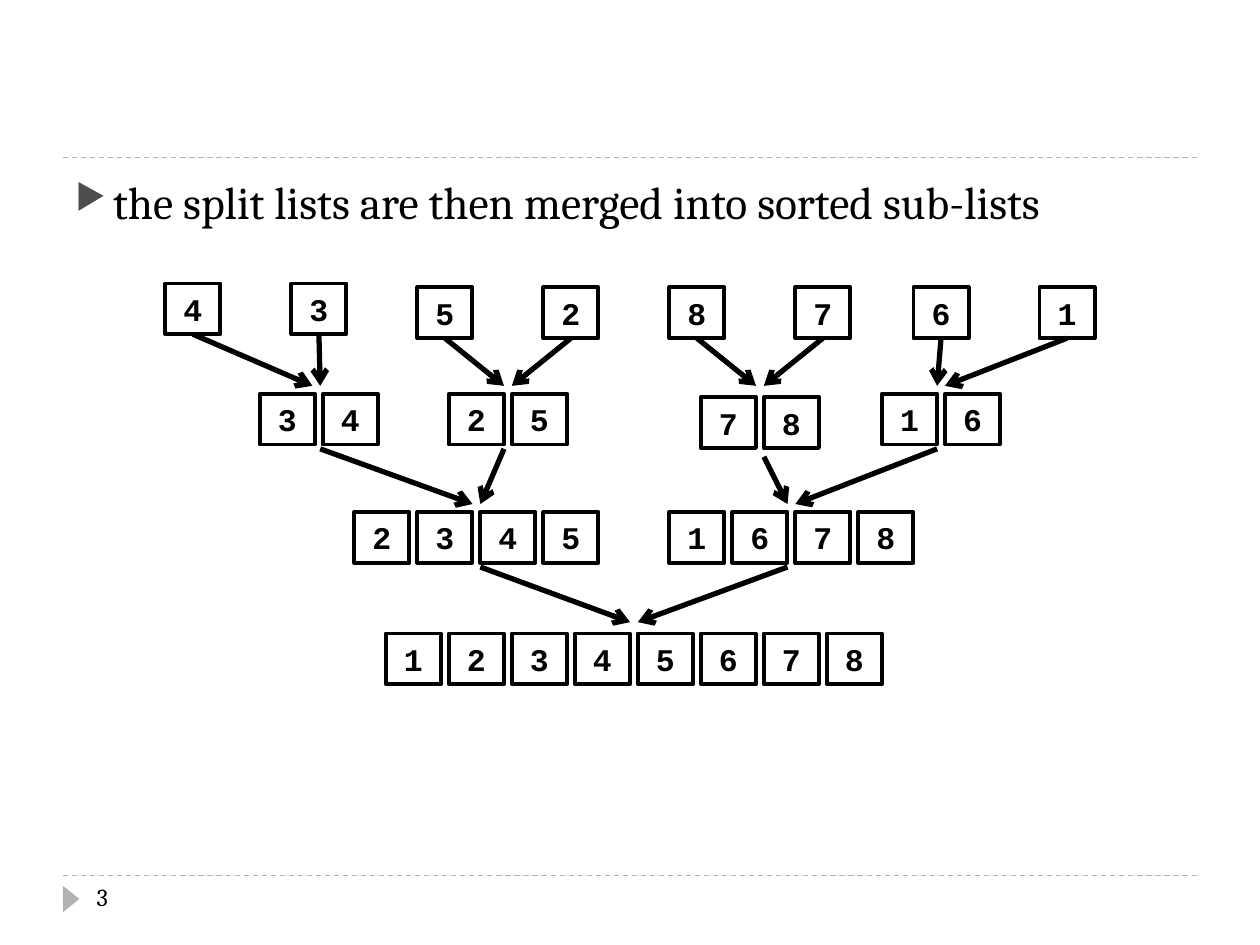
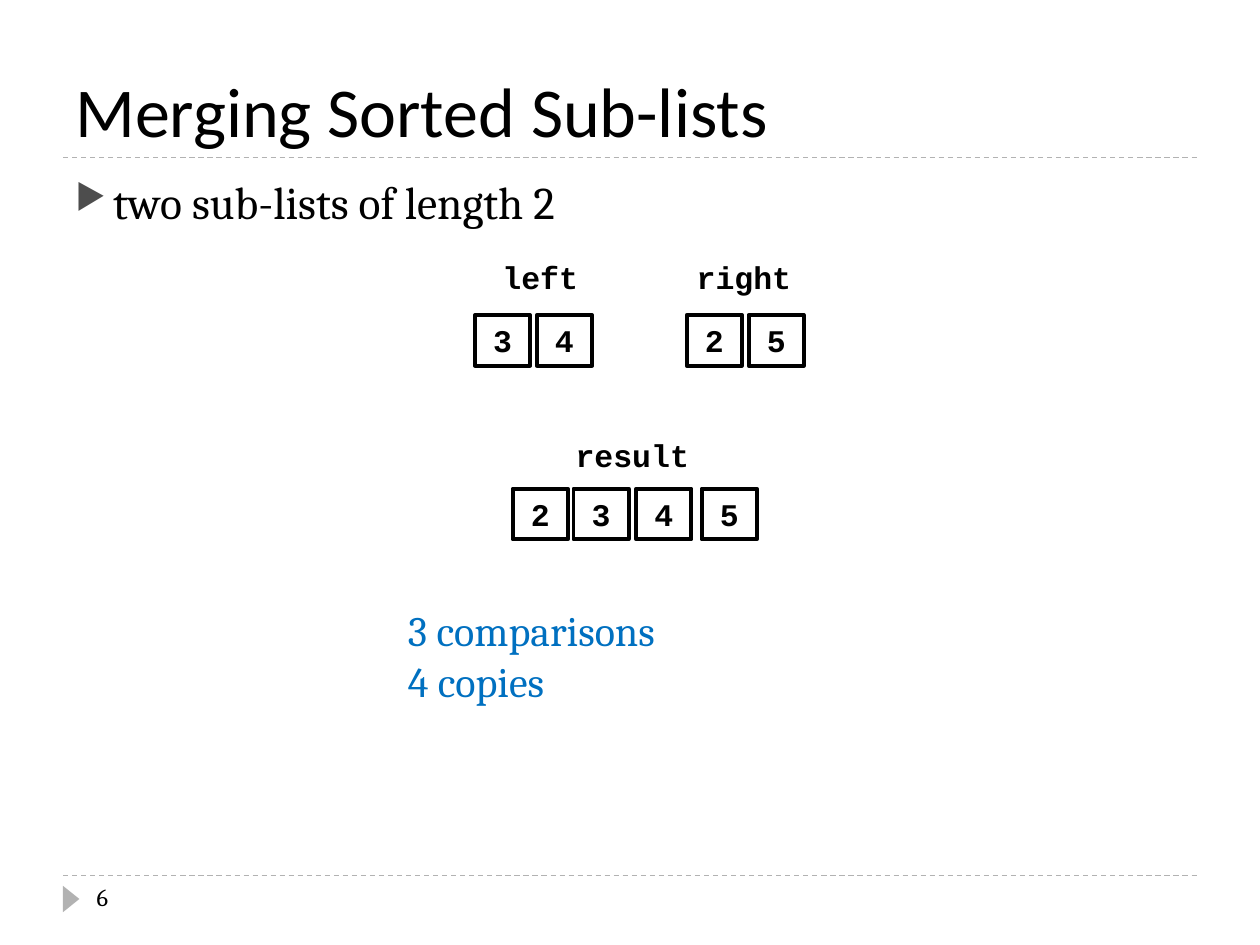
"""Builds two slides on merging sorted sub-lists."""
import pptx
import pptx.dml.color
import pptx.enum.dml
import pptx.enum.shapes
import pptx.enum.text
import pptx.oxml
import pptx.oxml.ns
import pptx.util

Pt = pptx.util.Pt
RGBColor = pptx.dml.color.RGBColor
Align = pptx.enum.text.PP_ALIGN
Anchor = pptx.enum.text.MSO_ANCHOR
Shape = pptx.enum.shapes.MSO_SHAPE

BLACK = RGBColor(0x00, 0x00, 0x00)
GREY = RGBColor(0xB2, 0xB2, 0xB2)
DARK = RGBColor(0x4D, 0x4D, 0x4D)
BLUE = RGBColor(0x00, 0x70, 0xC0)
HEAD, BODY, CODE = "Calibri", "Cambria", "Courier New"
WIDE, HIGH, STEP = 31.5, 29, 36


def element(tag, **attrs):
    node = pptx.oxml.parse_xml(f"<a:{tag} {pptx.oxml.ns.nsdecls('a')}/>")
    for key, value in attrs.items():
        node.set(key, str(value))
    return node


class Deck:
    def __init__(self):
        self.show = pptx.Presentation()
        self.show.slide_width, self.show.slide_height = Pt(720), Pt(540)
        self.slide = None

    def page(self, number, point, title=None):
        self.slide = self.show.slides.add_slide(self.show.slide_layouts[6])
        for y in (500.4, 90):
            rule = self.line((36, y), (684, y), GREY, 0.75)
            rule.line.dash_style = pptx.enum.dml.MSO_LINE.DASH
        mark = self.shape(Shape.ISOSCELES_TRIANGLE, 33.1, 509, 15.1, 9.4)
        mark.rotation = 90
        mark.fill.solid()
        mark.fill.fore_color.rgb = GREY
        mark.line.fill.background()
        if title:
            frame = self.text([title], (36, 12.2, 648, 77.8), HEAD, 40)
            frame.vertical_anchor = Anchor.BOTTOM
        self.bullet(point)
        self.text([str(number)], (48.2, 500.4, 156, 28.8), BODY, 14)

    def shape(self, kind, x, y, w, h):
        item = self.slide.shapes.add_shape(kind, Pt(x), Pt(y), Pt(w), Pt(h))
        item.shadow.inherit = False
        return item

    def run(self, para, words, font, size, color=BLACK, bold=False):
        run = para.add_run()
        run.text = words
        run.font.name, run.font.size, run.font.bold = font, Pt(size), bold
        run.font.color.rgb = color

    def text(self, lines, box, font, size, color=BLACK, bold=False, wrap=True):
        item = self.slide.shapes.add_textbox(*map(Pt, box))
        frame = item.text_frame
        frame.word_wrap = wrap
        if not wrap:
            frame.auto_size = pptx.enum.text.MSO_AUTO_SIZE.SHAPE_TO_FIT_TEXT
        for index, words in enumerate(lines):
            para = frame.add_paragraph() if index else frame.paragraphs[0]
            self.run(para, words, font, size, color, bold)
        return frame

    def bullet(self, words):
        frame = self.text([words], (36, 95.8, 648, 388.8), BODY, 26)
        para = frame.paragraphs[0]
        para.space_before = Pt(6)
        props = para._p.get_or_add_pPr()
        props.set("marL", str(Pt(21.6)))
        props.set("indent", str(-Pt(21.6)))
        tint = element("buClr")
        tint.append(element("srgbClr", val=DARK))
        props.append(tint)
        props.append(element("buSzPct", val=76000))
        props.append(element("buChar", char="▶"))

    def label(self, words, x, y, w):
        self.text([words], (x, y, w, HIGH), CODE, 18, bold=True, wrap=False)

    def cell(self, digit, x, y):
        item = self.shape(Shape.RECTANGLE, x, y, WIDE, HIGH)
        item.fill.background()
        item.line.color.rgb = BLACK
        item.line.width = Pt(2.25)
        frame = item.text_frame
        frame.word_wrap = False
        para = frame.paragraphs[0]
        para.alignment = Align.CENTER
        self.run(para, digit, CODE, 18, bold=True)
        return item

    def row(self, digits, x, y, step=STEP):
        return [self.cell(digit, x + i * step, y) for i, digit in enumerate(digits)]

    def line(self, start, end, color=BLACK, width=3):
        kind = pptx.enum.shapes.MSO_CONNECTOR.STRAIGHT
        item = self.slide.shapes.add_connector(kind, *map(Pt, start + end))
        item.line.color.rgb = color
        item.line.width = Pt(width)
        item._element.spPr.append(element("effectLst"))
        return item

    def arrow(self, start, end, source=None):
        item = self.line(start, end)
        item.line._get_or_add_ln().append(element("tailEnd", type="arrow"))
        if source is not None:
            item.begin_connect(source, 2)


def merge(deck):
    deck.page(3, "the split lists are then merged into sorted sub-lists")
    leaves = []
    for digits, x, y in (("43", 94.5, 162), ("5287", 238.5, 164.25), ("61", 522, 164.25)):
        leaves += deck.row(digits, x, y, 2 * STEP)
    lists = (
        ("34", 148.5, 225), ("25", 256.5, 225), ("78", 400.5, 227), ("16", 504, 225),
        ("2345", 202.5, 292.5), ("1678", 382.5, 292.5), ("12345678", 220.5, 362),
    )
    for digits, x, y in lists:
        deck.row(digits, x, y)
    for i, x in enumerate((178.5, 288, 432, 535.5)):
        for side in (0, 1):
            deck.arrow((0, 0), (x + 4.5 * side, 220.5), leaves[2 * i + side])
    joins = (
        ((183, 256.5), (288, 256.5), (270, 288)),
        ((436.5, 261), (535.5, 256.5), (450, 288)),
        ((274.5, 324), (450, 324), (360, 355.5)),
    )
    for left, right, (x, y) in joins:
        deck.arrow(left, (x, y))
        deck.arrow(right, (x + 4.5, y))


def result(deck):
    deck.page(6, "two sub-lists of length 2", "Merging Sorted Sub-lists")
    for words, x, y, w in (("left", 280, 144, 58.3), ("right", 391, 144, 69.1),
                           ("result", 321.8, 245.5, 79.9)):
        deck.label(words, x, y, w)
    deck.row("34", 271.4, 180, 35.4)
    deck.row("25", 392.4, 180, 35.4)
    for digit, x in zip("2345", (293, 327.7, 363.6, 401)):
        deck.cell(digit, x, 279.2)
    deck.text(["3 comparisons", "4 copies"], (226, 342, 164.2, 65.5),
              BODY, 24, BLUE, wrap=False)


def main():
    deck = Deck()
    merge(deck)
    result(deck)
    deck.show.save("out.pptx")


if __name__ == "__main__":
    main()
